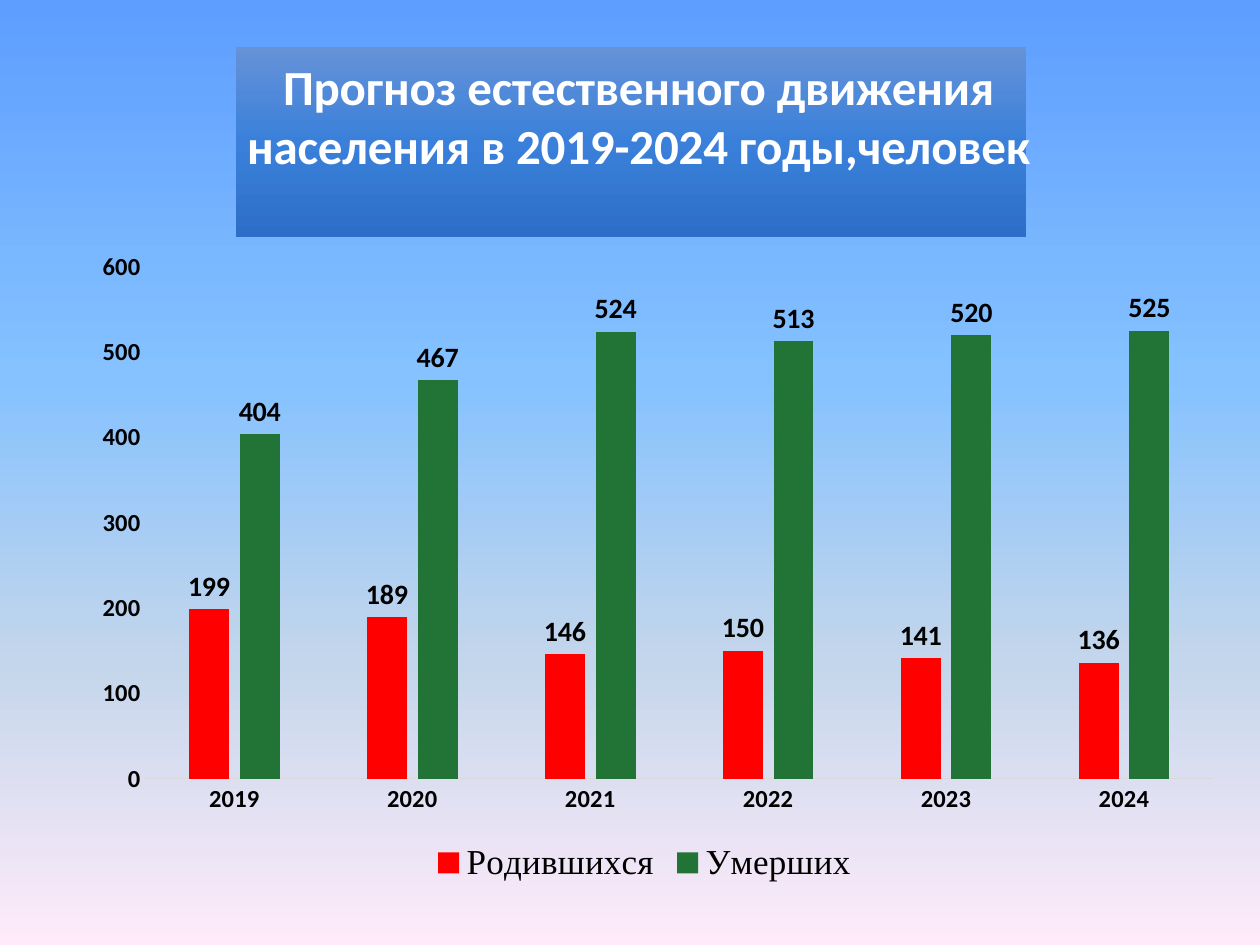
from lxml.etree import SubElement
from pptx import Presentation
from pptx.chart.data import CategoryChartData
from pptx.dml.color import RGBColor
from pptx.enum.chart import (XL_CHART_TYPE, XL_LABEL_POSITION,
                             XL_LEGEND_POSITION, XL_TICK_MARK)
from pptx.enum.shapes import MSO_SHAPE
from pptx.oxml.ns import qn
from pptx.util import Inches, Pt

TITLE = "Прогноз естественного движения населения в 2019-2024 годы,человек"
YEARS = ["2019", "2020", "2021", "2022", "2023", "2024"]
SERIES = [
    ("Родившихся", [199, 189, 146, 150, 141, 136], "FF0000"),
    ("Умерших", [404, 467, 524, 513, 520, 525], "217436"),
]
SKY = [(0, "5E9EFF"), (40, "85C2FF"), (70, "C4D6EB"), (100, "FFEBFA")]
BANNER = [(0, "6692D8"), (50, "3A80DA"), (100, "2D6FC8")]


def color(hex_string):
    return RGBColor.from_string(hex_string)


def format_font(font, size, bold=False, name="Calibri", fill="000000"):
    font.size, font.bold, font.name = Pt(size), bold, name
    font.color.rgb = color(fill)


def fill_gradient(fill, owner, stops):
    """Fill from top to bottom with (percent, colour) stops."""
    fill.gradient()
    fill.gradient_angle = 270
    stop_list = next(owner.element.iter(qn("a:gsLst")))
    for stop in list(stop_list):
        stop_list.remove(stop)
    for percent, hex_string in stops:
        stop = SubElement(stop_list, qn("a:gs"), pos=str(percent * 1000))
        SubElement(stop, qn("a:srgbClr"), val=hex_string)


def place(parent, index, **values):
    """Give a chart part a manual layout in shares of the chart's size."""
    for old in parent.findall(qn("c:layout")):
        parent.remove(old)
    layout = parent.makeelement(qn("c:layout"))
    parent.insert(index, layout)
    manual = SubElement(layout, qn("c:manualLayout"))
    for tag, value in values.items():
        SubElement(manual, qn(f"c:{tag}"), val=str(value))


def add_banner(slide):
    banner = slide.shapes.add_shape(MSO_SHAPE.RECTANGLE, Inches(1.87), Inches(0.37),
                                    Inches(6.27), Inches(1.51))
    banner.shadow.inherit = False
    banner.line.fill.background()
    fill_gradient(banner.fill, banner, BANNER)


def add_column_chart(slide):
    data = CategoryChartData()
    data.categories = YEARS
    for name, values, _ in SERIES:
        data.add_series(name, values)
    chart = slide.shapes.add_chart(XL_CHART_TYPE.COLUMN_CLUSTERED, Inches(0.51), Inches(0.29),
                                   Inches(9.21), Inches(6.77), data).chart
    format_font(chart.font, 10)
    return chart


def format_title(chart):
    frame = chart.chart_title.text_frame
    frame.text = TITLE
    format_font(frame.paragraphs[0].runs[0].font, 28, bold=True, fill="FFFFFF")
    chart.chart_title.include_in_layout = False
    place(next(chart.element.iter(qn("c:title"))), 1,
          xMode="edge", yMode="edge", x=0.15, y=0.01)


def format_plot(chart):
    plot = chart.plots[0]
    plot.gap_width, plot.overlap, plot.vary_by_categories = 219, -27, False
    for series, (_, _, fill) in zip(plot.series, SERIES):
        series.format.fill.solid()
        series.format.fill.fore_color.rgb = color(fill)
        labels = series.data_labels
        labels.show_value = True
        labels.position = XL_LABEL_POSITION.OUTSIDE_END
        format_font(labels.font, 16, bold=True)
    place(next(chart.element.iter(qn("c:plotArea"))), 0, layoutTarget="inner",
          xMode="edge", yMode="edge", x=0.07, y=0.27, w=0.92, h=0.6)


def format_axes(chart):
    for axis in (chart.category_axis, chart.value_axis):
        axis.major_tick_mark = axis.minor_tick_mark = XL_TICK_MARK.NONE
        axis.has_major_gridlines = False
        format_font(axis.tick_labels.font, 14, bold=True)
    line = chart.category_axis.format.line
    line.color.rgb, line.width = color("D9D9D9"), Pt(0.75)
    value_axis = chart.value_axis
    value_axis.format.line.fill.background()
    value_axis.minimum_scale, value_axis.maximum_scale = 0, 600
    value_axis.major_unit = 100


def format_legend(chart):
    chart.has_legend = True
    chart.legend.position = XL_LEGEND_POSITION.BOTTOM
    chart.legend.include_in_layout = False
    format_font(chart.legend.font, 20, name="Times New Roman")


def main():
    presentation = Presentation()
    presentation.slide_width, presentation.slide_height = Inches(10), Inches(7.5)
    slide = presentation.slides.add_slide(presentation.slide_layouts[6])
    # Background and the banner behind the chart title
    fill_gradient(slide.background.fill, slide, SKY)
    add_banner(slide)
    # Chart of births and deaths
    chart = add_column_chart(slide)
    for format_part in (format_title, format_plot, format_axes, format_legend):
        format_part(chart)
    presentation.save("out.pptx")


if __name__ == "__main__":
    main()
